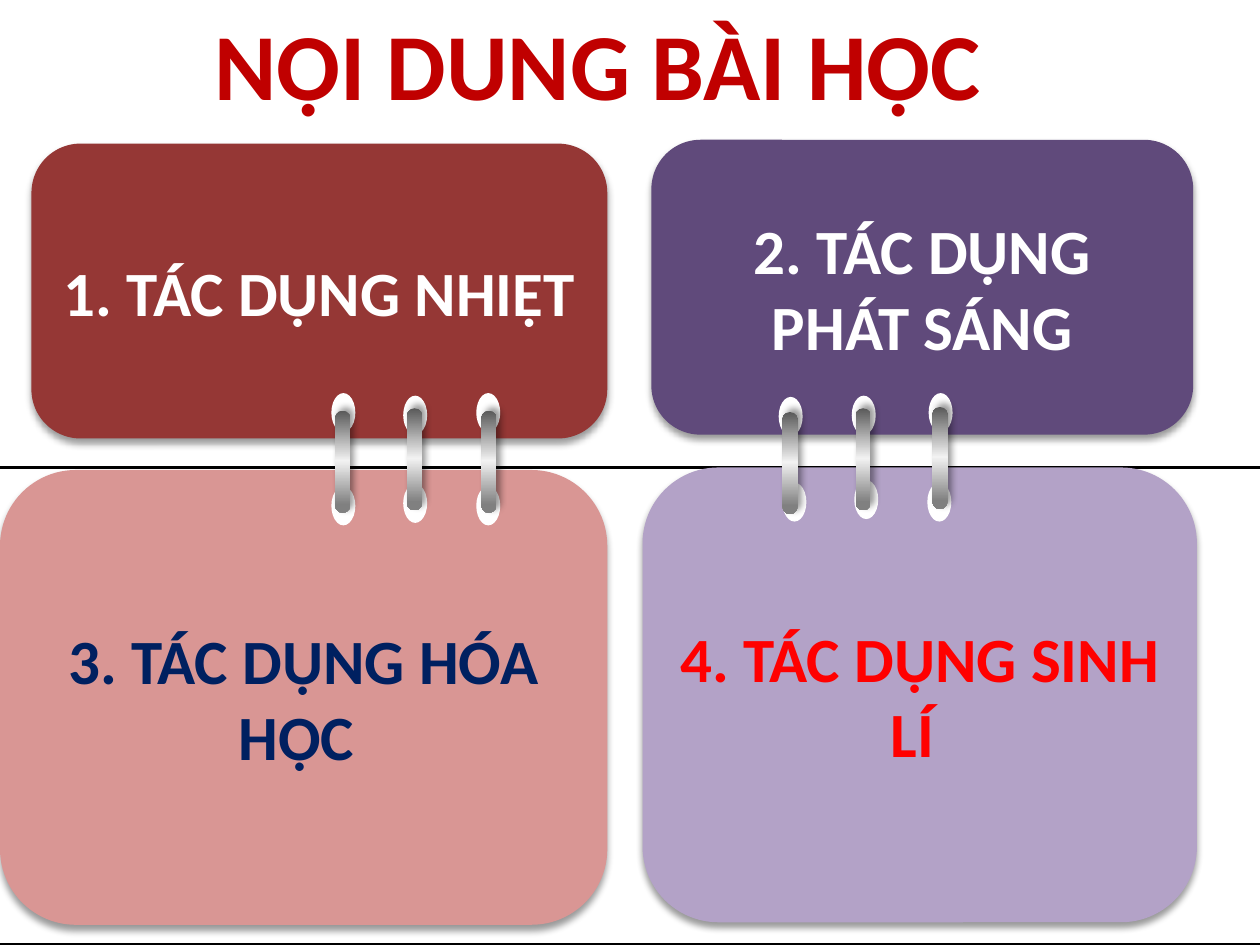
from lxml.etree import SubElement
from copy import deepcopy
from pptx import Presentation
from pptx.dml.color import RGBColor
from pptx.enum.shapes import MSO_SHAPE
from pptx.enum.text import MSO_ANCHOR, MSO_AUTO_SIZE, PP_ALIGN
from pptx.oxml.ns import qn
from pptx.util import Inches, Pt


def color(code):
    return RGBColor.from_string(code)


def write(frame, text, size=36, ink="FFFFFF", bold=True, font="Calibri"):
    frame.word_wrap = True
    para = frame.paragraphs[0]
    para.alignment = PP_ALIGN.CENTER
    span = para.add_run()
    span.text = text
    span.font.size = Pt(size)
    span.font.bold = bold
    span.font.name = font
    span.font.color.rgb = color(ink)
    return span


class Board:
    metal = [(0, "595959"), (0.49, "F2F2F2"), (0.92, "808080")]
    hole_size = (0.19, 0.31)
    bar_size = (0.12, 0.81)

    def __init__(self, page):
        self.page = page

    def shape(self, kind, place, fill=None):
        shape = self.page.shapes.add_shape(kind, *map(Inches, place))
        shape.shadow.inherit = False
        shape.line.fill.background()
        if fill:
            shape.fill.solid()
            shape.fill.fore_color.rgb = color(fill)
        return shape

    def shadow(self, shape, angle):
        effects = shape._element.spPr.find(qn("a:effectLst"))
        outer = SubElement(effects, qn("a:outerShdw"), blurRad=str(Pt(4)),
                           dist=str(Pt(3)), dir=str(angle * 60000), rotWithShape="0")
        shade = SubElement(outer, qn("a:srgbClr"), val="000000")
        SubElement(shade, qn("a:alpha"), val="40000")

    def panel(self, place):
        panel = self.shape(MSO_SHAPE.RECTANGLE, place, "FFFFFF")
        panel.line.color.rgb = color("000000")
        panel.line.width = Pt(2)

    def card(self, place, fill, text, ink):
        card = self.shape(MSO_SHAPE.ROUNDED_RECTANGLE, place, fill)
        self.shadow(card, 90)
        card.text_frame.vertical_anchor = MSO_ANCHOR.MIDDLE
        write(card.text_frame, text, ink=ink)

    def ring(self, upper, lower, bar):
        for corner in (upper, lower):
            self.shape(MSO_SHAPE.OVAL, corner + self.hole_size, "FFFFFF")
        ring = self.shape(MSO_SHAPE.ROUNDED_RECTANGLE, bar + self.bar_size)
        ring.adjustments[0] = 0.5
        ring.fill.gradient()
        ring.fill.gradient_angle = 270
        stop_list = ring._element.spPr.find(qn("a:gradFill")).find(qn("a:gsLst"))
        stop_list.append(deepcopy(stop_list[0]))
        for stop, (position, code) in zip(ring.fill.gradient_stops, self.metal):
            stop.position = position
            stop.color.rgb = color(code)
        self.shadow(ring, 315)

    def title(self, place, text):
        box = self.page.shapes.add_textbox(*map(Inches, place))
        span = write(box.text_frame, text, size=54, ink="C00000")
        box.text_frame.auto_size = MSO_AUTO_SIZE.SHAPE_TO_FIT_TEXT
        properties = span.font._element
        outline = SubElement(properties, qn("a:ln"), w=str(Pt(1.42)))
        fill = SubElement(outline, qn("a:solidFill"))
        SubElement(fill, qn("a:srgbClr"), val="D73A36")
        properties.insert(0, outline)


def main():
    deck = Presentation()
    deck.slide_width, deck.slide_height = Inches(10), Inches(7.5)
    board = Board(deck.slides.add_slide(deck.slide_layouts[6]))

    board.panel((-0.07, 3.7, 10.22, 3.8))
    board.panel((-0.14, -0.14, 10.29, 3.85))

    cards = [
        ((5.1, 3.71, 4.4, 3.61), "B3A2C7", "4. TÁC DỤNG SINH LÍ ", "FF0000"),
        ((5.17, 1.11, 4.3, 2.34), "604A7B", "2. TÁC DỤNG PHÁT SÁNG", "FFFFFF"),
        ((0, 3.73, 4.82, 3.61), "D99694", "3. TÁC DỤNG HÓA HỌC ", "002060"),
        ((0.25, 1.14, 4.57, 2.34), "953735", "1. TÁC DỤNG NHIỆT ", "FFFFFF"),
    ]
    for card in cards:
        board.card(*card)

    rings = [
        ((2.63, 3.12), (2.63, 3.86), (2.66, 3.26)),
        ((3.2, 3.14), (3.2, 3.84), (3.23, 3.24)),
        ((3.78, 3.12), (3.78, 3.86), (3.82, 3.26)),
        ((6.18, 3.15), (6.21, 3.83), (6.21, 3.27)),
        ((6.76, 3.14), (6.78, 3.81), (6.79, 3.24)),
        ((7.37, 3.12), (7.36, 3.83), (7.4, 3.23)),
    ]
    for ring in rings:
        board.ring(*ring)

    board.title((0.83, 0, 8, 1.01), "NỘI DUNG BÀI HỌC ")
    deck.save("out.pptx")


if __name__ == "__main__":
    main()
